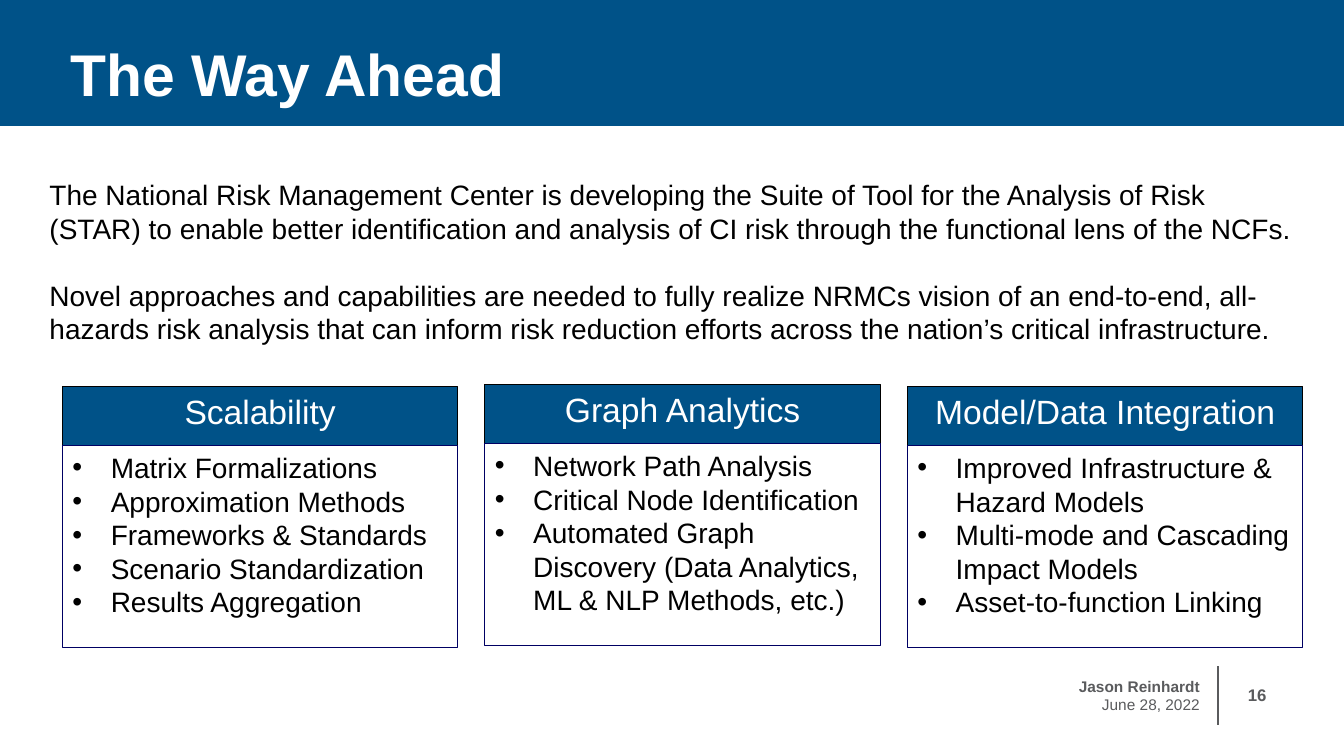
from dataclasses import dataclass

from lxml import etree
from pptx import Presentation
from pptx.dml.color import RGBColor
from pptx.enum.shapes import MSO_CONNECTOR, MSO_SHAPE
from pptx.enum.text import MSO_ANCHOR, MSO_AUTO_SIZE, PP_ALIGN
from pptx.oxml.ns import qn
from pptx.util import Inches, Pt

RECTANGLE = MSO_SHAPE.RECTANGLE
STRAIGHT = MSO_CONNECTOR.STRAIGHT
LEFT, CENTER, RIGHT = PP_ALIGN.LEFT, PP_ALIGN.CENTER, PP_ALIGN.RIGHT
TOP, MIDDLE = MSO_ANCHOR.TOP, MSO_ANCHOR.MIDDLE


@dataclass(frozen=True)
class Theme:
    font: str = "Arial"
    blue: str = "005288"
    navy: str = "000063"
    black: str = "000000"
    white: str = "FFFFFF"
    gray: str = "5A5B5D"
    title: int = 42
    heading: int = 24
    body: int = 20
    number: int = 12
    footer: int = 11


THEME = Theme()
INTRO = [
    "The National Risk Management Center is developing the Suite of Tool for the "
    "Analysis of Risk (STAR) to enable better identification and analysis of CI risk "
    "through the functional lens of the NCFs.",
    "Novel approaches and capabilities are needed to fully realize NRMCs vision of an "
    "end-to-end, all-hazards risk analysis that can inform risk reduction efforts across "
    "the nation’s critical infrastructure.",
]
# Heading, top edge, bullet points
CARDS = [
    ("Scalability", 3.83, [
        "Matrix Formalizations", "Approximation Methods", "Frameworks & Standards",
        "Scenario Standardization", "Results Aggregation"]),
    ("Graph Analytics", 3.81, [
        "Network Path Analysis", "Critical Node Identification",
        "Automated Graph Discovery (Data Analytics, ML & NLP Methods, etc.)"]),
    ("Model/Data Integration", 3.83, [
        "Improved Infrastructure & Hazard Models",
        "Multi-mode and Cascading Impact Models", "Asset-to-function Linking"]),
]
CARD_LEFT, CARD_STEP, CARD_WIDTH = 0.62, 4.19, 3.92
HEADING_HEIGHT, LIST_HEIGHT = 0.59, 2


def apply(target, values):
    for name, value in values.items():
        setattr(target, name, value)


def place(shape, left, top, width, height):
    apply(shape, {"left": Inches(left), "top": Inches(top),
                  "width": Inches(width), "height": Inches(height)})


def set_bullet(paragraph, char=None):
    """Give the paragraph a hanging bullet, or none at all."""
    properties = paragraph._p.get_or_add_pPr()
    indent = Inches(0.38) if char else 0
    properties.set("marL", str(indent))
    properties.set("indent", str(-indent))
    if char:
        etree.SubElement(properties, qn("a:buFont"), typeface=THEME.font)
        etree.SubElement(properties, qn("a:buChar"), char=char)
    else:
        etree.SubElement(properties, qn("a:buNone"))


def write(shape, lines, size, color, bold=(False,), align=LEFT, anchor=TOP,
          bullet=None, gap=0):
    """Fill a shape with paragraphs; bold is cycled over the lines."""
    frame = shape.text_frame
    apply(frame, {"word_wrap": True, "auto_size": MSO_AUTO_SIZE.NONE,
                  "vertical_anchor": anchor})
    for index, line in enumerate(lines):
        paragraph = frame.paragraphs[0] if index == 0 else frame.add_paragraph()
        set_bullet(paragraph, bullet)
        apply(paragraph, {"alignment": align, "space_before": Pt(gap if index else 0)})
        run = paragraph.add_run()
        run.text = line
        apply(run.font, {"name": THEME.font, "size": Pt(size),
                         "bold": bold[index % len(bold)]})
        run.font.color.rgb = RGBColor.from_string(color)


def paint(shape, fill):
    shape.fill.solid()
    shape.fill.fore_color.rgb = RGBColor.from_string(fill)


def add_box(slide, area, fill, outline):
    box = slide.shapes.add_shape(RECTANGLE, *map(Inches, area))
    box.shadow.inherit = False
    paint(box, fill)
    box.line.color.rgb = RGBColor.from_string(outline)
    box.line.width = Pt(0.75)
    return box


def add_label(slide, area, lines, size, bold):
    label = slide.shapes.add_textbox(*map(Inches, area))
    write(label, lines, size, THEME.gray, bold, RIGHT, MIDDLE)


def add_card(slide, left, top, heading, points):
    header = add_box(slide, (left, top, CARD_WIDTH, HEADING_HEIGHT),
                     THEME.blue, THEME.black)
    write(header, [heading], THEME.heading, THEME.white, align=CENTER)
    panel = add_box(slide, (left, top + HEADING_HEIGHT, CARD_WIDTH, LIST_HEIGHT),
                    THEME.white, THEME.navy)
    write(panel, points, THEME.body, THEME.black, bullet="•")


def add_footer(slide):
    divider = slide.shapes.add_connector(
        STRAIGHT, Inches(12.08), Inches(6.61), Inches(12.08), Inches(7.19))
    divider.line.color.rgb = RGBColor.from_string(THEME.gray)
    divider.line.width = Pt(1)
    etree.SubElement(divider._element.spPr, qn("a:effectLst"))
    add_label(slide, (9, 6.61, 3, 0.58), ["Jason Reinhardt", "June 28, 2022"],
              THEME.footer, (True, False))
    add_label(slide, (12.08, 6.74, 0.58, 0.3), ["16"], THEME.number, (True,))


def main():
    deck = Presentation()
    apply(deck, {"slide_width": Inches(13.33), "slide_height": Inches(7.5)})
    slide = deck.slides.add_slide(deck.slide_layouts[1])

    # Title band
    title = slide.shapes.title
    place(title, 0, 0, 13.33, 1.25)
    paint(title, THEME.blue)
    apply(title.text_frame, {"margin_left": Inches(0.7), "margin_top": Inches(0.3),
                             "margin_right": Inches(0.1), "margin_bottom": Inches(0.1)})
    write(title, ["The Way Ahead"], THEME.title, THEME.white, (True,), anchor=MIDDLE)

    # Introduction
    intro = slide.placeholders[1]
    place(intro, 0.39, 1.71, 12.55, 2)
    write(intro, INTRO, THEME.body, THEME.black, gap=24)

    # Three cards
    for column, (heading, top, points) in enumerate(CARDS):
        add_card(slide, CARD_LEFT + column * CARD_STEP, top, heading, points)

    add_footer(slide)
    deck.save("out.pptx")


if __name__ == "__main__":
    main()
